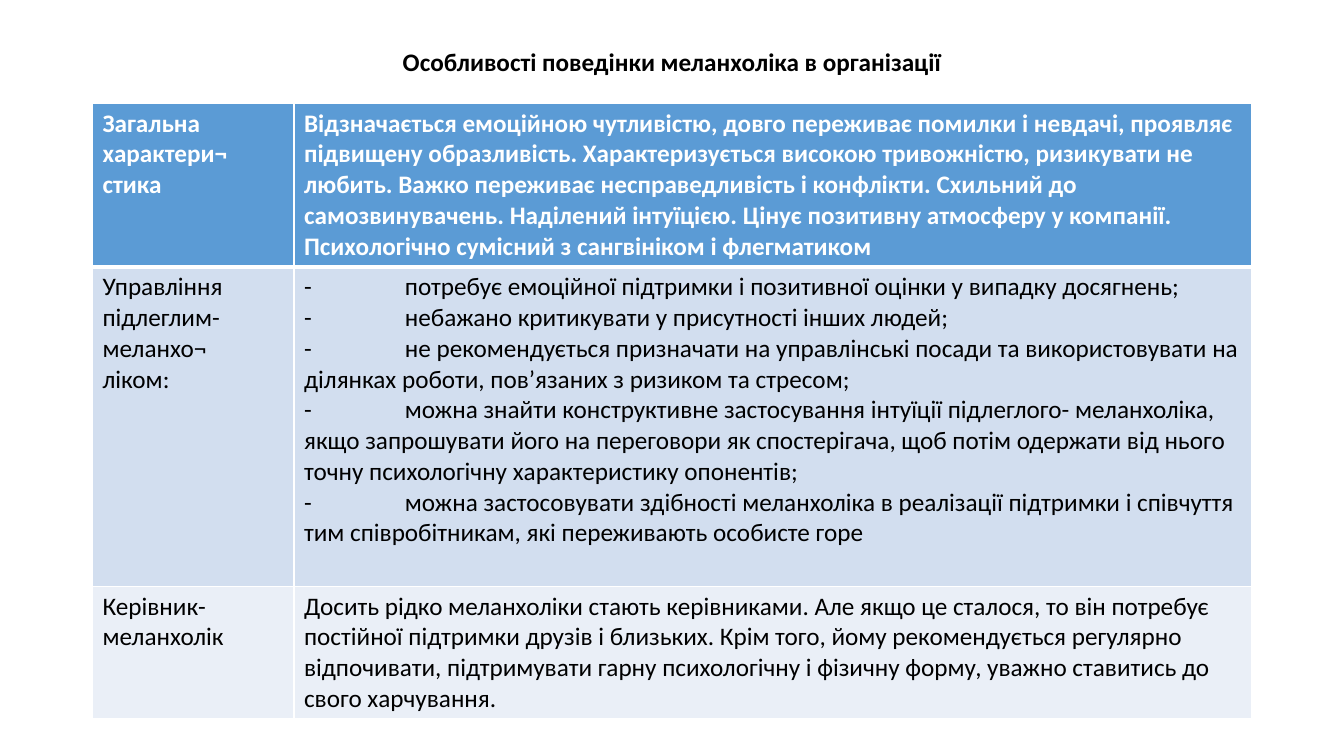
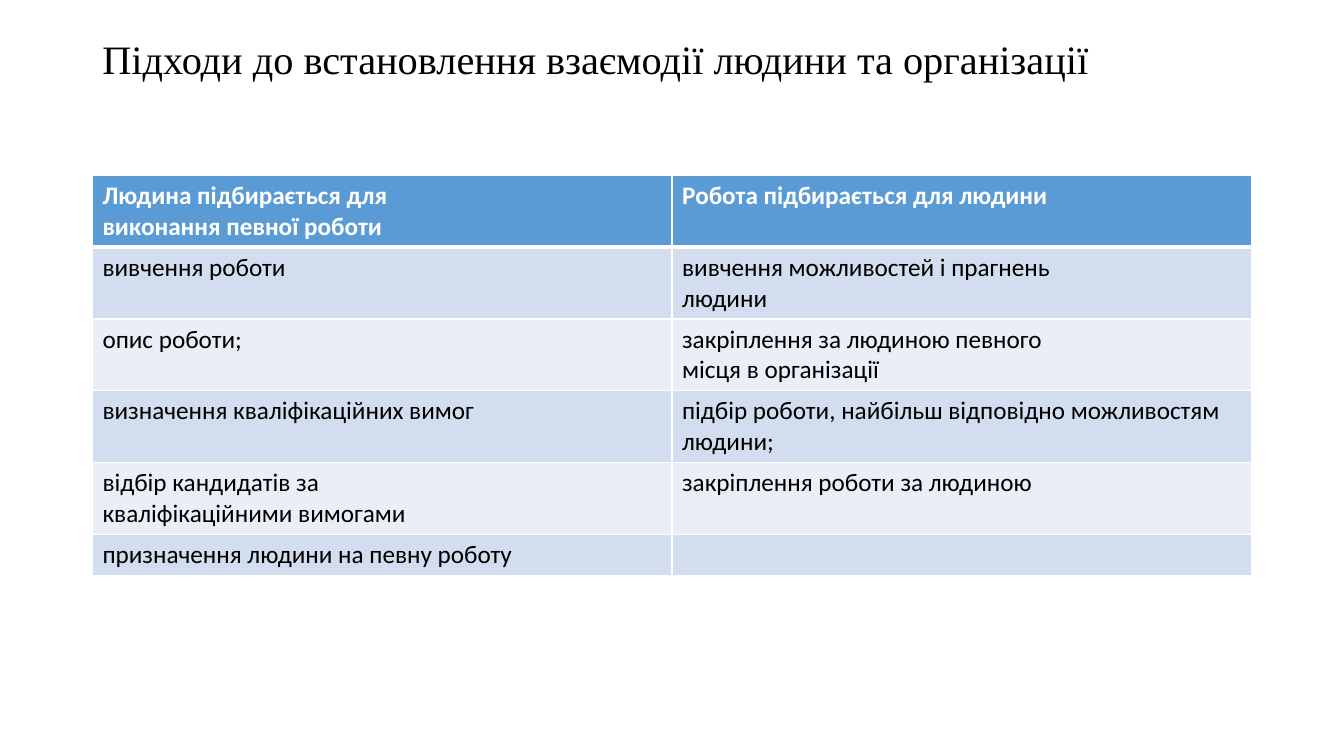
from pptx import Presentation
from pptx.dml.color import RGBColor
from pptx.enum.text import MSO_ANCHOR, PP_ALIGN
from pptx.oxml import parse_xml
from pptx.oxml.ns import nsdecls
from pptx.util import Cm, Pt

HEX = {"head": "5B9BD5", "odd": "D2DEEF", "even": "EAEFF7",
       "white": "FFFFFF", "black": "000000"}
LEFT, WIDTH = 2.33, 29.21
THIN, THICK = 1, 3
TAB = 2.54


def write(frame, text, size=18, font="Calibri", color="black", bold=False,
          align=PP_ALIGN.LEFT, space=1.0):
    """Fill a text frame, one paragraph for each line of text."""
    frame.word_wrap = True
    for i, line in enumerate(text.split("\n")):
        para = frame.paragraphs[0] if i == 0 else frame.add_paragraph()
        para.alignment, para.line_spacing = align, space
        if "\t" in line:
            para._p.get_or_add_pPr().append(parse_xml(
                f'<a:tabLst {nsdecls("a")}><a:tab pos="{Cm(TAB)}" algn="l"/>'
                '</a:tabLst>'))
        para.font.size = Pt(size)
        if not line:
            continue
        run = para.add_run()
        run.text = line
        run.font.name, run.font.size, run.font.bold = font, Pt(size), bold
        run.font.color.rgb = RGBColor.from_string(HEX[color])


def edge(cell, side, width):
    """Draw one white cell border."""
    cell._tc.get_or_add_tcPr().append(parse_xml(
        f'<a:ln{side} {nsdecls("a")} w="{Pt(width)}"><a:solidFill>'
        f'<a:srgbClr val="{HEX["white"]}"/></a:solidFill></a:ln{side}>'))


# Content: title, title format, title height, table top, columns, rows, cells
slides = [
    ("Особливості поведінки меланхоліка в організації",
     dict(bold=True, align=PP_ALIGN.CENTER), 1.17,
     2.6, (5.08, 24.13), (4.12, 8.05, 3.35), [
         ("Загальна\nхарактери¬\nстика",
          "Відзначається емоційною чутливістю, довго переживає помилки і невдачі, "
          "проявляє підвищену образливість. Характеризується високою тривожністю, "
          "ризикувати не любить. Важко переживає несправедливість і конфлікти. "
          "Схильний до самозвинувачень. Наділений інтуїцією. Цінує позитивну "
          "атмосферу у компанії. Психологічно сумісний з сангвініком і флегматиком"),
         ("Управління\nпідлеглим-\nмеланхо¬\nліком:",
          "-\tпотребує емоційної підтримки і позитивної оцінки у випадку досягнень;\n"
          "-\tнебажано критикувати у присутності інших людей;\n"
          "-\tне рекомендується призначати на управлінські посади та використовувати "
          "на ділянках роботи, пов’язаних з ризиком та стресом;\n"
          "-\tможна знайти конструктивне застосування інтуїції підлеглого- "
          "меланхоліка, якщо запрошувати його на переговори як спостерігача, щоб "
          "потім одержати від нього точну психологічну характеристику опонентів;\n"
          "-\tможна застосовувати здібності меланхоліка в реалізації підтримки і "
          "співчуття тим співробітникам, які переживають особисте горе"),
         ("Керівник-\nмеланхолік",
          "Досить рідко меланхоліки стають керівниками. Але якщо це сталося, то він "
          "потребує постійної підтримки друзів і близьких. Крім того, йому "
          "рекомендується регулярно відпочивати, підтримувати гарну психологічну і "
          "фізичну форму, уважно ставитись до свого харчування."),
     ]),
    ("Підходи до встановлення взаємодії людини та організації",
     dict(size=28.8, font="Times New Roman"), 1.04,
     4.42, (WIDTH / 2, WIDTH / 2), (1.81,) * 5 + (1.03,), [
         ("Людина підбирається для\nвиконання певної роботи",
          "Робота підбирається для людини"),
         ("вивчення роботи", "вивчення можливостей і прагнень\nлюдини"),
         ("опис роботи;", "закріплення за людиною певного\nмісця в організації"),
         ("визначення кваліфікаційних вимог",
          "підбір роботи, найбільш відповідно можливостям людини;"),
         ("відбір кандидатів за\nкваліфікаційними вимогами",
          "закріплення роботи за людиною"),
         ("призначення людини на певну роботу", ""),
     ]),
]

prs = Presentation()
prs.slide_width, prs.slide_height = Cm(33.87), Cm(19.05)

for title, style, tall, top, cols, rows, cells in slides:
    slide = prs.slides.add_slide(prs.slide_layouts[6])

    # Title
    box = slide.shapes.add_textbox(Cm(LEFT), Cm(1.02), Cm(WIDTH), Cm(tall))
    box.text_frame.vertical_anchor = MSO_ANCHOR.MIDDLE
    write(box.text_frame, title, space=0.9, **style)

    # Table
    table = slide.shapes.add_table(len(rows), len(cols), Cm(LEFT), Cm(top),
                                   Cm(WIDTH), Cm(sum(rows))).table
    for col, wide in zip(table.columns, cols):
        col.width = Cm(wide)
    for r, (high, texts) in enumerate(zip(rows, cells)):
        table.rows[r].height = Cm(high)
        head = r == 0
        fill = "head" if head else "odd" if r % 2 else "even"
        for c, text in enumerate(texts):
            cell = table.cell(r, c)
            edge(cell, "L", THIN)
            edge(cell, "R", THIN)
            edge(cell, "T", THICK if r == 1 else THIN)
            edge(cell, "B", THICK if head else THIN)
            cell.fill.solid()
            cell.fill.fore_color.rgb = RGBColor.from_string(HEX[fill])
            write(cell.text_frame, text, bold=head,
                  color="white" if head else "black")

prs.save("out.pptx")
